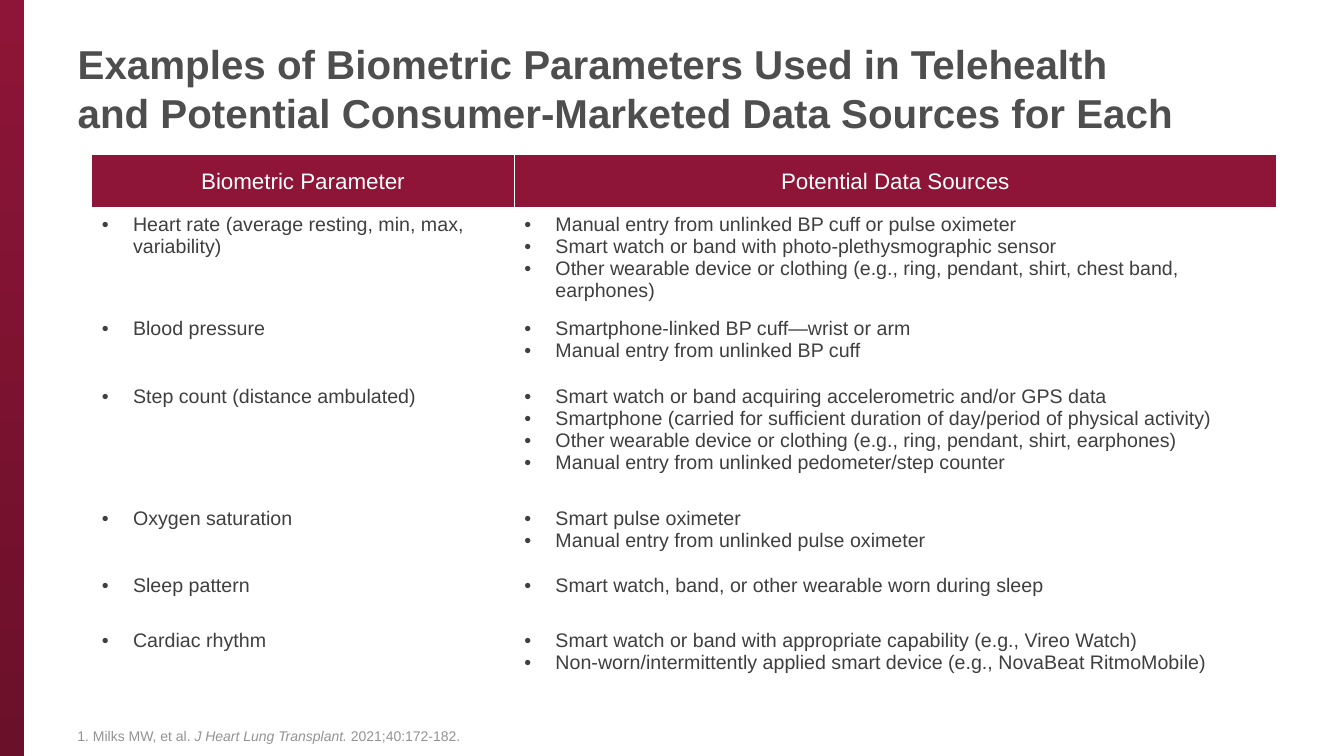
from dataclasses import dataclass

from lxml.etree import SubElement
from pptx import Presentation
from pptx.dml.color import RGBColor as RGB
from pptx.enum.shapes import MSO_SHAPE
from pptx.enum.text import MSO_ANCHOR as ANCHOR, MSO_AUTO_SIZE as AUTO, PP_ALIGN as ALIGN
from pptx.oxml.ns import qn
from pptx.util import Inches, Pt


@dataclass(frozen=True)
class Theme:
    font: str = "Arial"
    maroon: str = "8E1537"
    dark_maroon: str = "6B1029"
    title: str = "4D4E4D"
    body: str = "3F3F3F"
    note: str = "939393"
    white: str = "FFFFFF"
    title_size: float = 28.8
    head_size: float = 16
    body_size: float = 14
    note_size: float = 10


THEME = Theme()
WIDTH, HEIGHT = Inches(13.33), Inches(7.5)
LEFT, CONTENT_W = Inches(0.67), Inches(11.75)
TABLE_LEFT, TABLE_TOP = Inches(0.91), Inches(1.53)
COLUMNS = (4.19, 7.56)
ROWS = (0.54, 0.94, 0.67, 1.21, 0.67, 0.54, 0.67)
BULLET_INDENT = Inches(0.31)

TITLE = ("Examples of Biometric Parameters Used in Telehealth\v"
         "and Potential Consumer-Marketed Data Sources for Each")
HEADINGS = ("Biometric Parameter", "Potential Data Sources")
PARAMETERS = {
    "Heart rate (average resting, min, max, variability)": [
        "Manual entry from unlinked BP cuff or pulse oximeter",
        "Smart watch or band with photo-plethysmographic sensor",
        "Other wearable device or clothing (e.g., ring, pendant, shirt, chest band, earphones)",
    ],
    "Blood pressure": [
        "Smartphone-linked BP cuff—wrist or arm",
        "Manual entry from unlinked BP cuff",
    ],
    "Step count (distance ambulated)": [
        "Smart watch or band acquiring accelerometric and/or GPS data",
        "Smartphone (carried for sufficient duration of day/period of physical activity)",
        "Other wearable device or clothing (e.g., ring, pendant, shirt, earphones)",
        "Manual entry from unlinked pedometer/step counter",
    ],
    "Oxygen saturation": [
        "Smart pulse oximeter",
        "Manual entry from unlinked pulse oximeter",
    ],
    "Sleep pattern": ["Smart watch, band, or other wearable worn during sleep"],
    "Cardiac rhythm": [
        "Smart watch or band with appropriate capability (e.g., Vireo Watch)",
        "Non-worn/intermittently applied smart device (e.g., NovaBeat RitmoMobile)",
    ],
}
CITATION = (("1. Milks MW, et al. ", False),
            ("J Heart Lung Transplant. ", True),
            ("2021;40:172-182.", False))


def style(p, size, color, bold=False):
    for r in p.runs:
        r.font.name = THEME.font
        r.font.size = Pt(size)
        r.font.bold = bold
        r.font.color.rgb = RGB.from_string(color)


def add_sidebar(s):
    bar = s.shapes.add_shape(MSO_SHAPE.RECTANGLE, 0, 0, Inches(0.24), HEIGHT)
    bar.shadow.inherit = False
    bar.line.fill.background()
    bar.fill.gradient()
    bar.fill.gradient_angle = 270
    for stop, color in zip(bar.fill.gradient_stops, (THEME.maroon, THEME.dark_maroon)):
        stop.color.rgb = RGB.from_string(color)


def set_title(s):
    title = s.shapes.title
    title.left, title.top = LEFT, Inches(0.22)
    title.width, title.height = CONTENT_W, Inches(1.3)
    tf = title.text_frame
    tf.text = TITLE
    tf.auto_size = AUTO.NONE
    tf.vertical_anchor = ANCHOR.MIDDLE
    p = tf.paragraphs[0]
    p.alignment = ALIGN.LEFT
    style(p, THEME.title_size, THEME.title, bold=True)


def add_citation(s):
    box = s.shapes.add_textbox(LEFT, Inches(6.95), CONTENT_W, Inches(0.48))
    tf = box.text_frame
    tf.word_wrap = True
    tf.vertical_anchor = ANCHOR.BOTTOM
    p = tf.paragraphs[0]
    for text, italic in CITATION:
        r = p.add_run()
        r.text = text
        r.font.italic = italic
    style(p, THEME.note_size, THEME.note)


def set_borders(cell, bottom=1):
    tc_pr = cell._tc.get_or_add_tcPr()
    for side, width in (("L", 1), ("R", 1), ("T", 1), ("B", bottom)):
        line = SubElement(tc_pr, qn(f"a:ln{side}"), w=str(Pt(width)))
        fill = SubElement(line, qn("a:solidFill"))
        SubElement(fill, qn("a:srgbClr"), val=THEME.white)


def fill_heading(cell, text):
    set_borders(cell, bottom=3)
    cell.fill.solid()
    cell.fill.fore_color.rgb = RGB.from_string(THEME.maroon)
    cell.vertical_anchor = ANCHOR.MIDDLE
    p = cell.text_frame.paragraphs[0]
    p.text = text
    p.alignment = ALIGN.CENTER
    style(p, THEME.head_size, THEME.white)


def fill_bullets(cell, items):
    set_borders(cell)
    cell.fill.background()
    cell.text_frame.text = "\n".join(items)
    for p in cell.text_frame.paragraphs:
        p_pr = p._p.get_or_add_pPr()
        p_pr.set("marL", str(BULLET_INDENT))
        p_pr.set("indent", str(-BULLET_INDENT))
        SubElement(p_pr, qn("a:buFont"), typeface=THEME.font)
        SubElement(p_pr, qn("a:buChar"), char="•")
        style(p, THEME.body_size, THEME.body)


def add_parameter_table(s):
    table = s.shapes.add_table(len(ROWS), len(COLUMNS), TABLE_LEFT, TABLE_TOP,
                               Inches(sum(COLUMNS)), Inches(sum(ROWS))).table
    table.horz_banding = False
    for column, width in zip(table.columns, COLUMNS):
        column.width = Inches(width)
    for row, height in zip(table.rows, ROWS):
        row.height = Inches(height)
    for col, heading in enumerate(HEADINGS):
        fill_heading(table.cell(0, col), heading)
    for row, (parameter, sources) in enumerate(PARAMETERS.items(), start=1):
        fill_bullets(table.cell(row, 0), [parameter])
        fill_bullets(table.cell(row, 1), sources)


def main():
    prs = Presentation()
    prs.slide_width, prs.slide_height = WIDTH, HEIGHT
    s = prs.slides.add_slide(prs.slide_layouts.get_by_name("Title Only"))
    add_sidebar(s)
    add_citation(s)
    set_title(s)
    add_parameter_table(s)
    prs.save("out.pptx")


if __name__ == "__main__":
    main()
